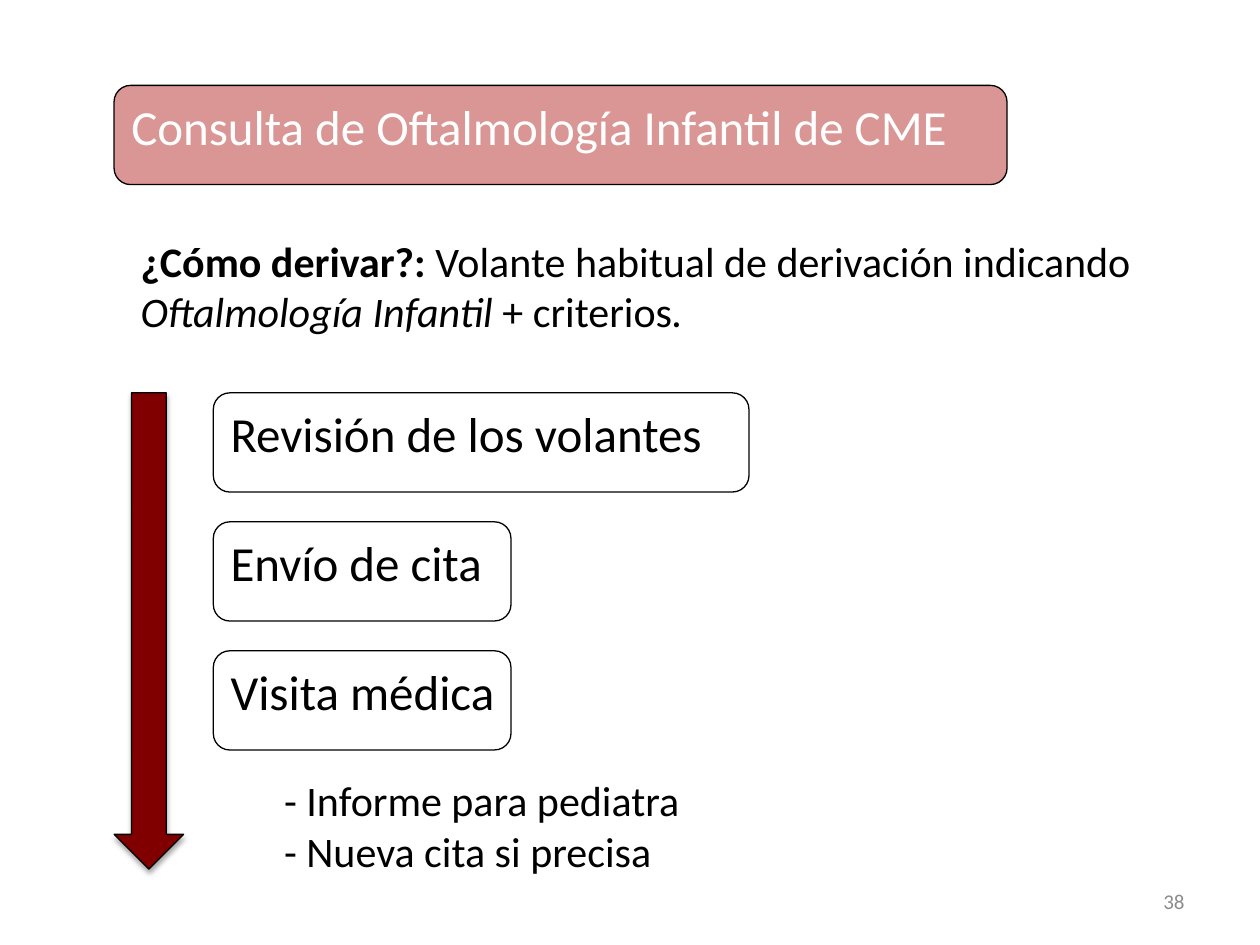
from pptx import Presentation
from pptx.dml.color import RGBColor
from pptx.enum.shapes import MSO_SHAPE
from pptx.enum.text import MSO_ANCHOR, PP_ALIGN
from pptx.oxml import parse_xml
from pptx.oxml.ns import nsdecls, qn
from pptx.util import Pt

ROUNDED, ARROW = MSO_SHAPE.ROUNDED_RECTANGLE, MSO_SHAPE.RIGHT_ARROW
TOP, MIDDLE = MSO_ANCHOR.TOP, MSO_ANCHOR.MIDDLE
LEFT, RIGHT, JUSTIFY = PP_ALIGN.LEFT, PP_ALIGN.RIGHT, PP_ALIGN.JUSTIFY

COLORS = {"black": "000000", "white": "FFFFFF", "rose": "D99694",
          "maroon": "800000", "gray": "8C8C8C"}
FONT = "Calibri"


def rgb(name):
    return RGBColor.from_string(COLORS[name])


class SlideBuilder:
    def __init__(self, slide):
        self.slide = slide

    def add_text(self, s, paragraphs, size, color="black", align=LEFT,
                 anchor=TOP, wrap=False):
        """Each paragraph is a list of (text, style); style holds b and/or i."""
        tf = s.text_frame
        tf.word_wrap = wrap
        tf.vertical_anchor = anchor
        for n, runs in enumerate(paragraphs):
            p = tf.add_paragraph() if n else tf.paragraphs[0]
            p.alignment = align
            for text, style in runs:
                r = p.add_run()
                r.text = text
                r.font.name, r.font.size = FONT, Pt(size)
                r.font.color.rgb = rgb(color)
                r.font.bold, r.font.italic = "b" in style, "i" in style

    def shape(self, kind, box, fill=None, outlined=True):
        s = self.slide.shapes.add_shape(kind, *map(Pt, box))
        s.shadow.inherit = False
        if fill:
            s.fill.solid()
            s.fill.fore_color.rgb = rgb(fill)
        else:
            s.fill.background()
        if outlined:
            s.line.color.rgb = rgb("black")
            s.line.width = Pt(0.75)
        else:
            s.line.fill.background()
        return s

    def panel(self, box, paragraphs, size, fill=None, outlined=True, **text):
        s = self.shape(ROUNDED, box, fill, outlined)
        self.add_text(s, paragraphs, size, **text)

    def label(self, box, text, size, **style):
        s = self.slide.shapes.add_textbox(*map(Pt, box))
        self.add_text(s, [[(text, "")]], size, wrap=True, **style)

    def down_arrow(self, box, fill):
        s = self.shape(ARROW, box, fill)
        s.rotation = 90
        effects = s._element.spPr.find(qn("a:effectLst"))
        effects.append(parse_xml(
            f'<a:outerShdw {nsdecls("a")} blurRad="{Pt(3.1)}" '
            f'dist="{Pt(1.8)}" dir="5400000" rotWithShape="0">'
            f'<a:srgbClr val="{COLORS["black"]}"><a:alpha val="35000"/>'
            '</a:srgbClr></a:outerShdw>'))


def main():
    prs = Presentation()
    prs.slide_width, prs.slide_height = Pt(720), Pt(540)
    b = SlideBuilder(prs.slides.add_slide(prs.slide_layouts[6]))

    # Slide number
    b.label((516, 500.5, 168, 28.8), "38", 12, color="gray", align=RIGHT,
            anchor=MIDDLE)

    # Title
    box_height = 56.7
    b.panel((65.2, 48.8, 510.3, box_height),
            [[("Consulta de Oftalmología Infantil de CME", "")]], 28,
            fill="rose", color="white")

    # How to refer
    b.panel((53.9, 111.6, 629.3, 396.9),
            [[("¿Cómo derivar?: ", "b"),
              ("Volante habitual de derivación indicando ", "")],
             [("Oftalmología Infantil ", "i"), ("+ criterios", ""),
              (".", "i")]],
            24, outlined=False, align=JUSTIFY)

    # Steps, evenly spaced beside the arrow
    steps = [("Revisión de los volantes", 306.1), ("Envío de cita", 170.1),
             ("Visita médica", 170.1)]
    for n, (text, width) in enumerate(steps):
        b.panel((121.9, 224.5 + 73.7 * n, width, box_height),
                [[(text, "")]], 28)
    b.down_arrow((-51, 340.7, 272.2, 39.7), "maroon")

    # Outcome of the visit
    b.panel((150.3, 434.2, 300.2, 102.2),
            [[("- Informe para pediatra", "")],
             [("- Nueva cita si precisa", "")]], 24, outlined=False)

    prs.save("out.pptx")


if __name__ == "__main__":
    main()
